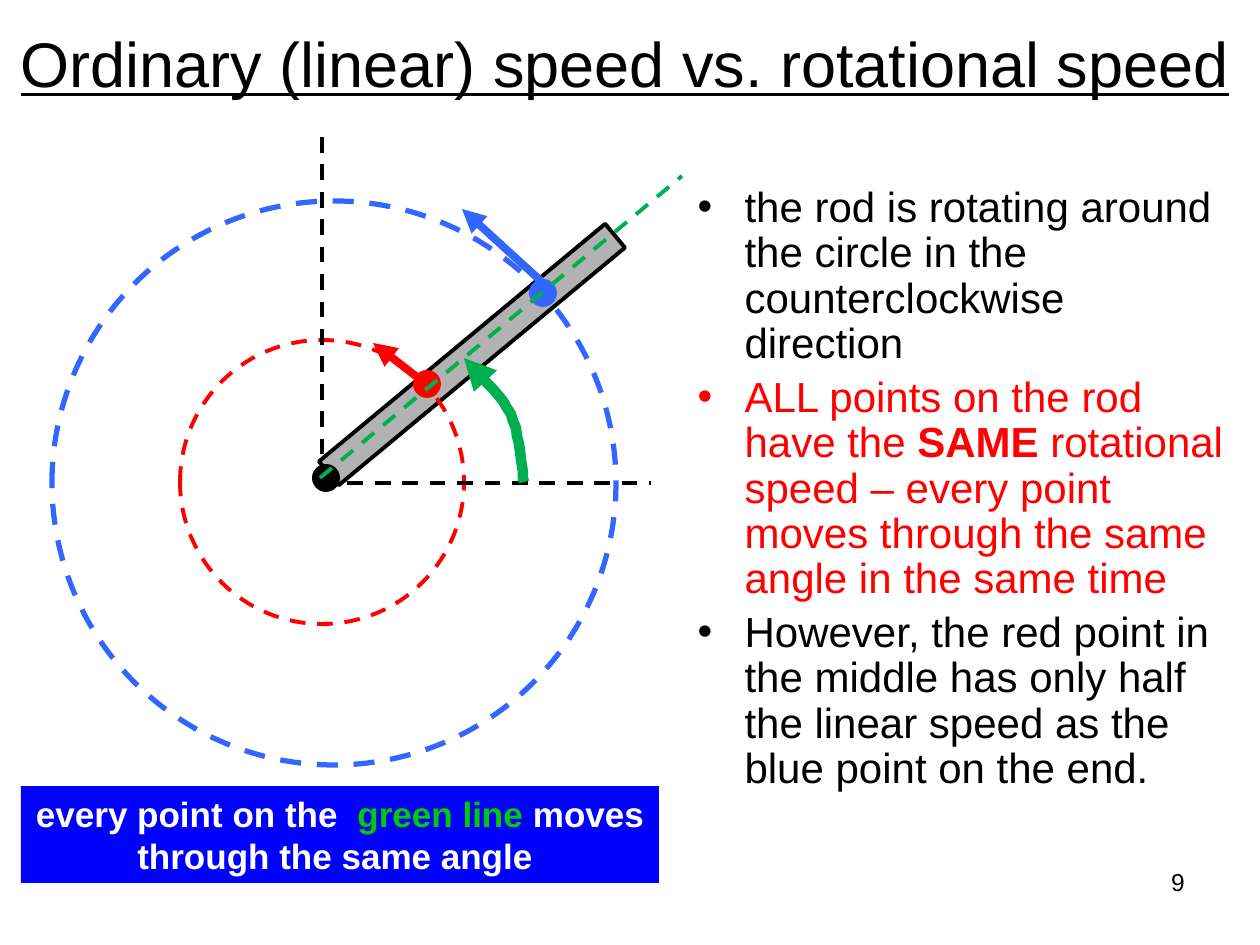
import lxml.etree
import pptx
import pptx.dml.color
import pptx.enum.dml
import pptx.enum.shapes
import pptx.enum.text
import pptx.oxml.ns
import pptx.util

RGBColor = pptx.dml.color.RGBColor
Align = pptx.enum.text.PP_ALIGN
Shape = pptx.enum.shapes.MSO_SHAPE
qn = pptx.oxml.ns.qn

BLACK = RGBColor(0x00, 0x00, 0x00)
WHITE = RGBColor(0xFF, 0xFF, 0xFF)
RED = RGBColor(0xFF, 0x00, 0x00)
BLUE = RGBColor(0x33, 0x66, 0xFF)
GREEN = RGBColor(0x00, 0xB0, 0x50)
GRAY = RGBColor(0xB2, 0xB2, 0xB2)
CAPTION_BLUE = RGBColor(0x00, 0x00, 0xFF)
CAPTION_GREEN = RGBColor(0x00, 0xCC, 0x00)

FONT = "Arial"
EMU_PER_PX = 914400 / 126

TITLE = [[("Ordinary (linear) speed vs. rotational speed", BLACK, False)]]
BULLETS = [
    [("the rod is rotating around the circle in the counterclockwise direction", BLACK, False)],
    [
        ("ALL points on the rod have the ", RED, False),
        ("SAME", RED, True),
        (" rotational speed – every point moves through the same angle in the same time", RED, False),
    ],
    [("However, the red point in the middle has only half the linear speed as the blue point on the end.", BLACK, False)],
]
CAPTION = [
    [
        ("every point on the  ", WHITE, True),
        ("green line ", CAPTION_GREEN, True),
        ("moves", WHITE, True),
    ],
    [("through the same angle ", WHITE, True)],
]
PAGE_NUMBER = [[("9", BLACK, False)]]

OUTER_CIRCLE = (334, 483, 282)
INNER_CIRCLE = (322, 482, 142)
ROD_BOX = (286, 339, 372, 31)
ROD_ANGLE = 320.3
DOT_RADIUS = 14
DOTS = [(326, 478, BLACK), (427, 384, RED), (543, 293, BLUE)]
VELOCITY_ARROWS = [((541, 281), (462, 209), BLUE), ((417, 377), (373, 343), RED)]
DASHED_LINES = [
    ((322, 137), (322, 471), BLACK),
    ((320, 478), (682, 176), GREEN),
    ((320, 483), (651, 483), BLACK),
]
ROTATION_CURVES = [
    ((524, 482), (522, 470), (520, 435), (511, 414)),
    ((511, 414), (500, 393), (474, 370), (464, 358)),
]
CURVE_STEPS = 10


def px(value):
    return pptx.util.Emu(round(value * EMU_PER_PX))


def place(shape, box):
    shape.left, shape.top, shape.width, shape.height = map(px, box)


def write(shape, paragraphs, size, alignment):
    frame = shape.text_frame
    for index, runs in enumerate(paragraphs):
        paragraph = frame.add_paragraph() if index else frame.paragraphs[0]
        paragraph.alignment = alignment
        for text, color, bold in runs:
            run = paragraph.add_run()
            run.text = text
            run.font.name = FONT
            run.font.size = pptx.util.Pt(size)
            run.font.color.rgb = color
            run.font.bold = bold
    return frame


def style_line(shape, color, width, dashed=False, arrow=False):
    shape.line.color.rgb = color
    shape.line.width = pptx.util.Pt(width)
    if dashed:
        shape.line.dash_style = pptx.enum.dml.MSO_LINE.DASH
    if arrow:
        outline = shape.line._get_or_add_ln()
        lxml.etree.SubElement(outline, qn("a:tailEnd"), type="triangle")


def add_shape(slide, kind, box, fill=None):
    shape = slide.shapes.add_shape(kind, *map(px, box))
    shape.shadow.inherit = False
    if fill is None:
        shape.fill.background()
    else:
        shape.fill.solid()
        shape.fill.fore_color.rgb = fill
    shape.line.fill.background()
    return shape


def add_circle(slide, center_x, center_y, radius, fill=None):
    box = (center_x - radius, center_y - radius, 2 * radius, 2 * radius)
    return add_shape(slide, Shape.OVAL, box, fill)


def add_line(slide, start, end, color, width, **options):
    line = slide.shapes.add_connector(
        pptx.enum.shapes.MSO_CONNECTOR.STRAIGHT, *map(px, start + end)
    )
    style_line(line, color, width, **options)
    lxml.etree.SubElement(line._element.spPr, qn("a:effectLst"))


def curve_point(curve, t):
    weights = ((1 - t) ** 3, 3 * t * (1 - t) ** 2, 3 * t * t * (1 - t), t ** 3)
    return tuple(
        sum(weight * point[axis] for weight, point in zip(weights, curve))
        for axis in (0, 1)
    )


def add_text(slide):
    title = slide.shapes.title
    place(title, (-5, 0, 1260, 125))
    frame = write(title, TITLE, 36, Align.CENTER)
    frame.auto_size = pptx.enum.text.MSO_AUTO_SIZE.NONE
    frame.vertical_anchor = pptx.enum.text.MSO_ANCHOR.MIDDLE
    frame.paragraphs[0].runs[0].font.underline = True

    body = slide.placeholders[1]
    place(body, (685, 180, 557, 633))
    frame = write(body, BULLETS, 24, Align.LEFT)
    frame.auto_size = pptx.enum.text.MSO_AUTO_SIZE.NONE
    for paragraph in frame.paragraphs:
        paragraph.line_spacing = 0.9
        paragraph.space_before = pptx.util.Pt(4.8)
        properties = paragraph._p.get_or_add_pPr()
        properties.set("marL", str(px(47)))
        properties.set("indent", str(px(-47)))
        lxml.etree.SubElement(properties, qn("a:buChar"), char="•")


def add_diagram(slide):
    outer = add_circle(slide, *OUTER_CIRCLE)
    style_line(outer, BLUE, 3, dashed=True)
    rod = add_shape(slide, Shape.RECTANGLE, ROD_BOX, GRAY)
    rod.rotation = ROD_ANGLE
    style_line(rod, BLACK, 2.25)
    for center_x, center_y, color in DOTS:
        add_circle(slide, center_x, center_y, DOT_RADIUS, color)
    for start, end, color in VELOCITY_ARROWS:
        add_line(slide, start, end, color, 4.5, arrow=True)
    inner = add_circle(slide, *INNER_CIRCLE)
    style_line(inner, RED, 2.25, dashed=True)
    for start, end, color in DASHED_LINES:
        add_line(slide, start, end, color, 2.25, dashed=True)

    points = [
        curve_point(curve, step / CURVE_STEPS)
        for curve in ROTATION_CURVES
        for step in range(1, CURVE_STEPS + 1)
    ]
    builder = slide.shapes.build_freeform(*ROTATION_CURVES[0][0], scale=EMU_PER_PX)
    builder.add_line_segments(points, close=False)
    rotation = builder.convert_to_shape()
    rotation.shadow.inherit = False
    rotation.fill.background()
    style_line(rotation, GREEN, 6, arrow=True)


def add_notes_on_slide(slide):
    caption = add_shape(slide, Shape.RECTANGLE, (21, 786, 638, 97), CAPTION_BLUE)
    frame = write(caption, CAPTION, 20, Align.CENTER)
    frame.word_wrap = False
    frame.auto_size = pptx.enum.text.MSO_AUTO_SIZE.SHAPE_TO_FIT_TEXT

    number = slide.shapes.add_textbox(*map(px, (903, 861, 294, 66)))
    write(number, PAGE_NUMBER, 14, Align.RIGHT).word_wrap = True


def main():
    presentation = pptx.Presentation()
    presentation.slide_width = px(1260)
    presentation.slide_height = px(945)
    slide = presentation.slides.add_slide(presentation.slide_layouts[1])
    add_text(slide)
    add_diagram(slide)
    add_notes_on_slide(slide)
    presentation.save("out.pptx")


if __name__ == "__main__":
    main()
